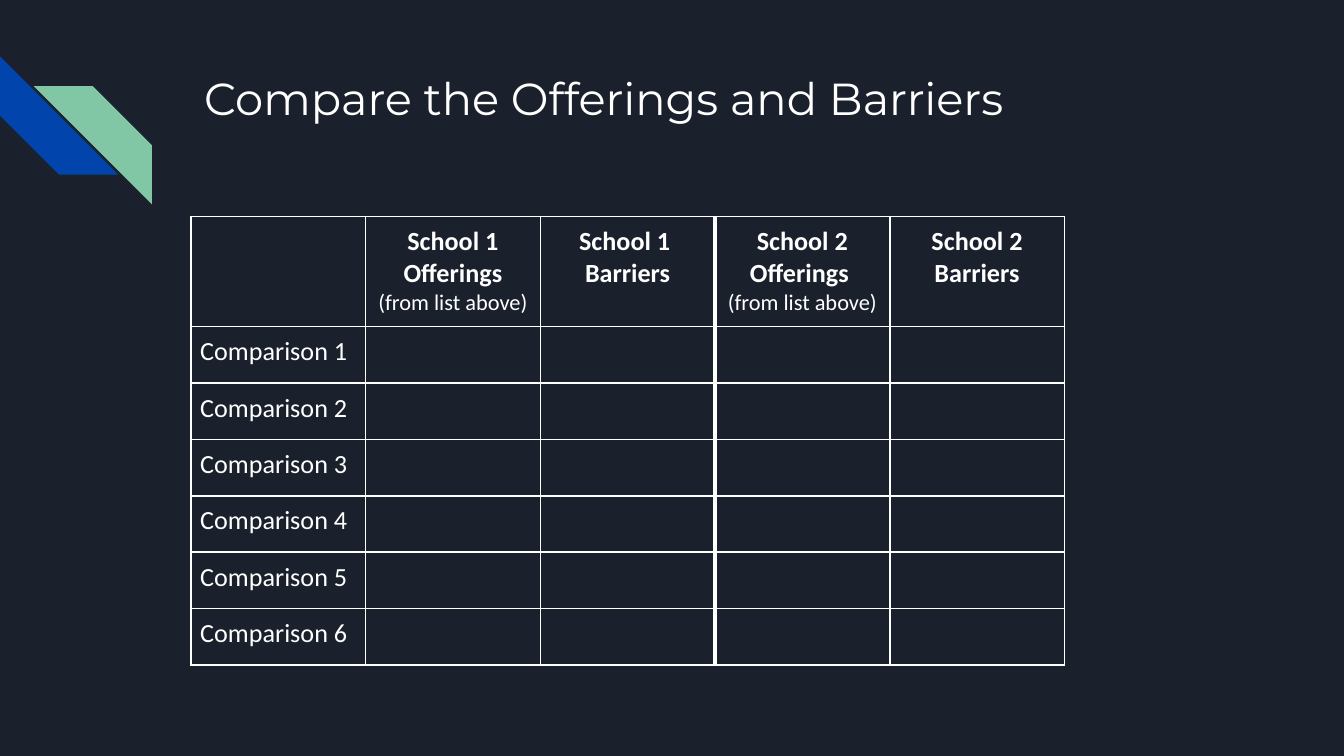
from lxml import etree
from pptx import Presentation
from pptx.dml.color import RGBColor
from pptx.enum.shapes import MSO_SHAPE
from pptx.enum.text import PP_ALIGN
from pptx.oxml.ns import qn
from pptx.util import Inches, Pt

STRIPE = MSO_SHAPE.DIAGONAL_STRIPE
LEFT, CENTER = PP_ALIGN.LEFT, PP_ALIGN.CENTER

# Content
TITLE = "Compare the Offerings and Barriers"
HEADS = [
    [],
    ["School 1", "Offerings", "(from list above)"],
    ["School 1 ", "Barriers"],
    ["School 2", "Offerings ", "(from list above)"],
    ["School 2", "Barriers"],
]
ROWS = [f"Comparison {n}" for n in range(1, 7)]
STRIPES = [  # left, top, colour, turn, flipped
    (0, 0.42, "0145AC", 270, False),
    (0.25, 0.64, "82C7A5", 0, True),
]

# Format
DARK, WHITE = "1B212C", "FFFFFF"
HEAD = {"name": "Calibri", "size": Pt(14), "bold": True}
NOTE = {"name": "Calibri", "size": Pt(12), "bold": False}
BODY = {"name": "Calibri", "size": Pt(14), "bold": False}
BANNER = {"name": "Montserrat", "size": Pt(24)}
SIDES = ("left", "right", "top", "bottom")
COL, HEAD_H, ROW_H = 1.3, 0.82, 0.42
THIN, THICK = 1, 2.25
SPLIT = 3  # the heavy rule stands left of this column


def color(code):
    return RGBColor.from_string(code)


def style(font, look):
    for key, value in look.items():
        setattr(font, key, value)
    font.color.rgb = color(WHITE)


def inset(part, gap):
    for side in SIDES:
        setattr(part, f"margin_{side}", Inches(gap))


def write(frame, lines, align):
    """Put (text, look) pairs into a frame, one paragraph each."""
    for i, (text, look) in enumerate(lines):
        para = frame.add_paragraph() if i else frame.paragraphs[0]
        para.alignment = align
        if text:
            run = para.add_run()
            run.text = text
            style(run.font, look)
        else:
            style(para.font, look)


def border(cell, col):
    props = cell._tc.get_or_add_tcPr()
    heavy = {"L": col == SPLIT, "R": col == SPLIT - 1}
    for side in "LRTB":
        width = THICK if heavy.get(side) else THIN
        line = etree.SubElement(props, qn(f"a:ln{side}"), w=str(Pt(width)))
        fill = etree.SubElement(line, qn("a:solidFill"))
        etree.SubElement(fill, qn("a:srgbClr"), val=WHITE)


# Widescreen slide, 16 to 9
deck = Presentation()
deck.slide_width = Inches(10)
deck.slide_height = deck.slide_width * 9 // 16
slide = deck.slides.add_slide(deck.slide_layouts[6])
slide.background.fill.solid()
slide.background.fill.fore_color.rgb = color(DARK)

# Corner stripes
for left, top, code, turn, flip in STRIPES:
    shape = slide.shapes.add_shape(
        STRIPE, Inches(left), Inches(top), Inches(0.88), Inches(0.88))
    shape.shadow.inherit = False
    shape.fill.solid()
    shape.fill.fore_color.rgb = color(code)
    shape.line.fill.background()
    shape.rotation = turn
    if flip:
        shape._element.spPr.xfrm.set("flipH", "1")

# Title
box = slide.shapes.add_textbox(Inches(1.42), Inches(0.43), Inches(7.7), Inches(1))
box.text_frame.word_wrap = True
inset(box.text_frame, 0.1)
write(box.text_frame, [(TITLE, BANNER)], LEFT)

# Comparison table
table = slide.shapes.add_table(
    len(ROWS) + 1, len(HEADS), Inches(1.42), Inches(1.61),
    Inches(COL * len(HEADS)), Inches(HEAD_H + ROW_H * len(ROWS))).table
table.first_row = table.horz_banding = False
for col in table.columns:
    col.width = Inches(COL)
for r, row in enumerate(table.rows):
    row.height = Inches(ROW_H if r else HEAD_H)
    for c, cell in enumerate(row.cells):
        inset(cell, 0.07)
        border(cell, c)
        cell.fill.background()
        if r:
            lines = [("" if c else ROWS[r - 1], BODY)]
        else:
            lines = [(text, NOTE if text.startswith("(") else HEAD)
                     for text in HEADS[c]] or [("", BODY)]
        write(cell.text_frame, lines, LEFT if r else CENTER)

deck.save("out.pptx")
